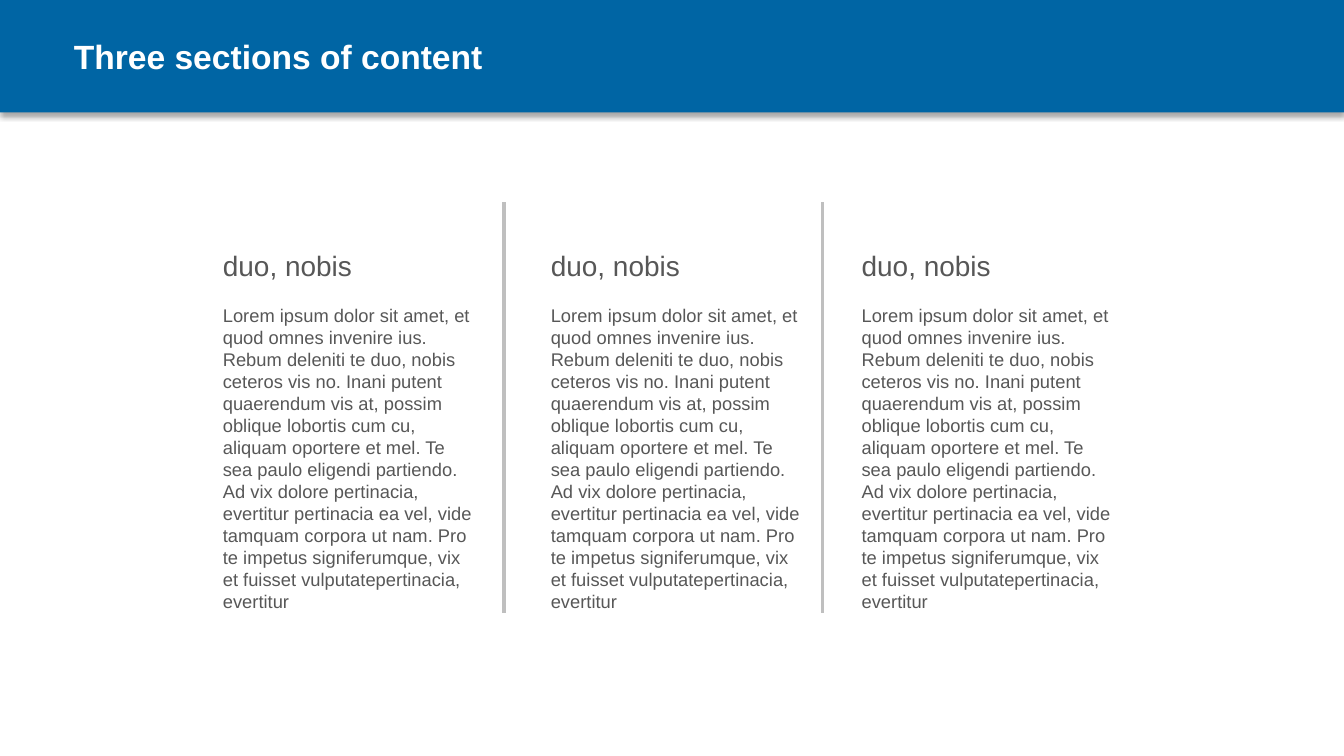
from typing import NamedTuple

from lxml import etree
from pptx import Presentation
from pptx.dml.color import RGBColor
from pptx.enum import shapes, text
from pptx.oxml import ns
from pptx.util import Pt

FONT = "Arial"
BLUE, WHITE, GREY, RULE = "0065A4", "FFFFFF", "575757", "BFBFBF"
HEAD = "duo, nobis"
BODY = (
    "Lorem ipsum dolor sit amet, et quod omnes invenire ius. "
    "Rebum deleniti te duo, nobis ceteros vis no. Inani putent "
    "quaerendum vis at, possim oblique lobortis cum cu, aliquam "
    "oportere et mel. Te sea paulo eligendi partiendo. Ad vix dolore "
    "pertinacia, evertitur pertinacia ea vel, vide tamquam corpora ut "
    "nam. Pro te impetus signiferumque, vix et fuisset "
    "vulputatepertinacia, evertitur"
)


class Column(NamedTuple):
    left: float
    head: str
    body: str


COLUMNS = [Column(left, HEAD, BODY) for left in (112.3, 288, 454.5)]
RULES = (270, 440.7)


def color(code: str) -> RGBColor:
    return RGBColor.from_string(code)


def add_run(para, words: str, size: float, code: str, bold: bool = False) -> None:
    run = para.add_run()
    run.text = words
    font = run.font
    font.name, font.size, font.bold = FONT, Pt(size), bold
    font.color.rgb = color(code)


def add_box(slide, left: float, top: float, width: float, height: float):
    box = slide.shapes.add_textbox(Pt(left), Pt(top), Pt(width), Pt(height))
    box.text_frame.word_wrap = True
    return box.text_frame


def add_band(slide) -> None:
    """Draw the blue header band with its soft lower shadow."""
    band = slide.shapes.add_shape(
        shapes.MSO_SHAPE.RECTANGLE, 0, 0, Pt(720), Pt(60.2)
    )
    band.fill.solid()
    band.fill.fore_color.rgb = color(BLUE)
    band.line.fill.background()
    band.shadow.inherit = False
    effects = band._element.spPr.find(ns.qn("a:effectLst"))
    shade = etree.SubElement(
        effects, ns.qn("a:outerShdw"),
        blurRad=str(Pt(3)), dist=str(Pt(1.8)), dir="5400000",
        algn="t", rotWithShape="0",
    )
    tint = etree.SubElement(shade, ns.qn("a:srgbClr"), val="000000")
    etree.SubElement(tint, ns.qn("a:alpha"), val="35000")


def add_title(slide, words: str) -> None:
    frame = add_box(slide, 36, 0.7, 648, 43.9)
    frame.vertical_anchor = text.MSO_ANCHOR.BOTTOM
    frame.margin_left = frame.margin_right = Pt(3.6)
    frame.margin_top = frame.margin_bottom = Pt(3.6)
    para = frame.paragraphs[0]
    para.line_spacing = 0.9
    add_run(para, words, 18, WHITE, bold=True)


def add_column(slide, col: Column) -> None:
    frame = add_box(slide, col.left, 129.6, 148.3, 204)
    frame.auto_size = text.MSO_AUTO_SIZE.SHAPE_TO_FIT_TEXT
    add_run(frame.paragraphs[0], col.head, 15, GREY)
    para = frame.add_paragraph()
    para.space_before = Pt(12)
    add_run(para, col.body, 9.8, GREY)


def add_rule(slide, left: float) -> None:
    rule = slide.shapes.add_connector(
        shapes.MSO_CONNECTOR.STRAIGHT, Pt(left), Pt(328.3), Pt(left), Pt(108)
    )
    rule.line.color.rgb = color(RULE)
    rule.line.width = Pt(2)
    etree.SubElement(rule._element.spPr, ns.qn("a:effectLst"))


def main() -> None:
    deck = Presentation()
    deck.slide_width, deck.slide_height = Pt(720), Pt(405)
    slide = deck.slides.add_slide(deck.slide_layouts[6])
    add_band(slide)
    add_title(slide, "Three sections of content")
    for col in COLUMNS:
        add_column(slide, col)
    for left in RULES:
        add_rule(slide, left)
    deck.save("out.pptx")


if __name__ == "__main__":
    main()
